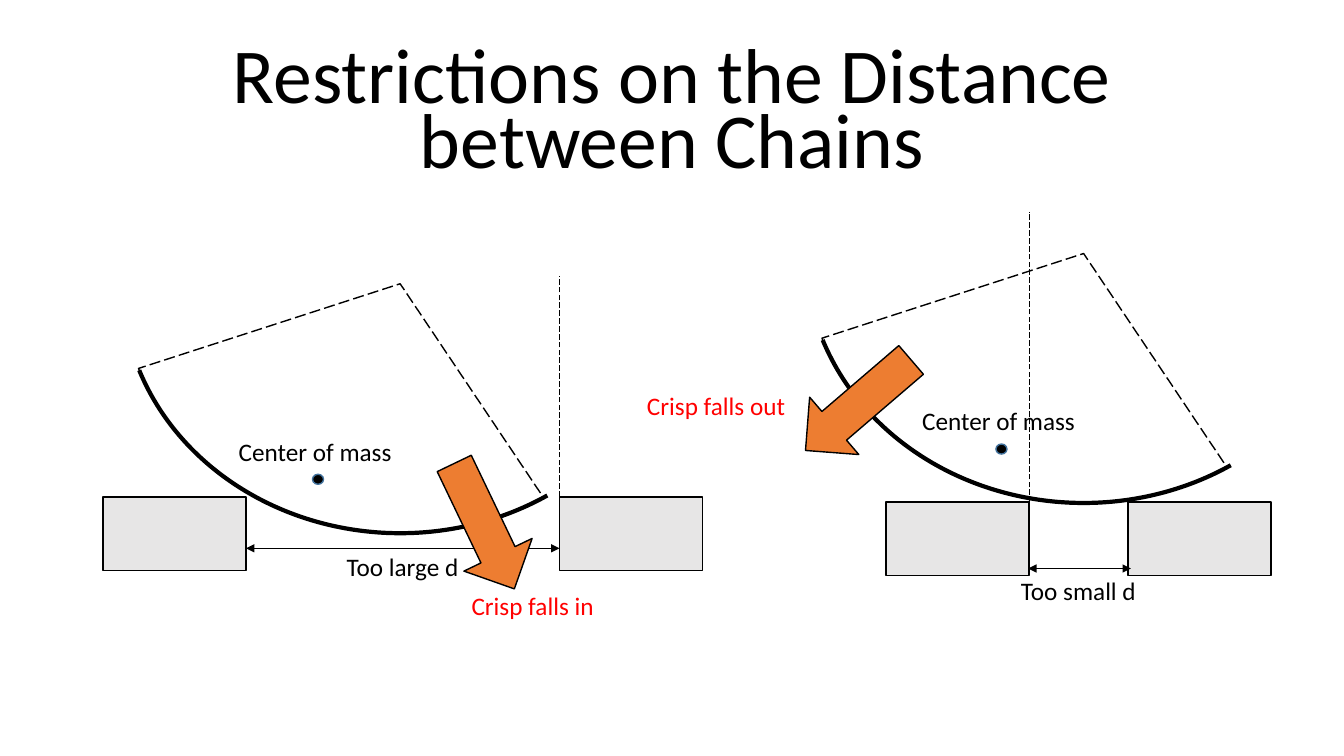
from lxml import etree
from pptx import Presentation
from pptx.dml.color import RGBColor
from pptx.enum.dml import MSO_LINE
from pptx.enum.shapes import MSO_CONNECTOR, MSO_SHAPE
from pptx.enum.text import MSO_ANCHOR, MSO_AUTO_SIZE, PP_ALIGN
from pptx.oxml.ns import qn
from pptx.util import Inches, Pt

RECT, PIE, ARC = MSO_SHAPE.RECTANGLE, MSO_SHAPE.PIE, MSO_SHAPE.ARC
OVAL, DOWN_ARROW = MSO_SHAPE.OVAL, MSO_SHAPE.DOWN_ARROW
STRAIGHT = MSO_CONNECTOR.STRAIGHT
LONG_DASH = MSO_LINE.LONG_DASH
BOTTOM = MSO_ANCHOR.BOTTOM
CENTER = PP_ALIGN.CENTER
GROW = MSO_AUTO_SIZE.SHAPE_TO_FIT_TEXT

BLACK = RGBColor(0x00, 0x00, 0x00)
WHITE = RGBColor(0xFF, 0xFF, 0xFF)
GRAY = RGBColor(0xE7, 0xE6, 0xE6)
ORANGE = RGBColor(0xED, 0x7D, 0x31)
RED = RGBColor(0xFF, 0x00, 0x00)
BLUE = RGBColor(0x43, 0x73, 0x9E)

COLUMNS, ROWS = 133.33, 75
CELL = Inches(0.1)
FONT = "Calibri"
CRISP_WIDTH, CRISP_HEIGHT = 55.2, 49.5
BLOCK_WIDTH, BLOCK_HEIGHT = 14.2, 7.3
GUIDE_HEIGHT = 28.9


def cells(*counts):
    return [round(count * CELL) for count in counts]


def set_all(target, values):
    for name, value in values.items():
        setattr(target, name, value)


def style_line(line, color, points, dash=None):
    line.color.rgb = color
    set_all(line, {"width": Pt(points), "dash_style": dash})


def add_figure(slide, kind, place, fill=None, color=BLACK, points=1,
               dash=None, angles=(), rotation=0):
    figure = slide.shapes.add_shape(kind, *cells(*place))
    figure.shadow.inherit = False
    figure.rotation = rotation
    for index, angle in enumerate(angles):
        figure.adjustments[index] = angle
    if fill is None:
        figure.fill.background()
    else:
        figure.fill.solid()
        figure.fill.fore_color.rgb = fill
    style_line(figure.line, color, points, dash)


def add_text(slide, words, place, size=18, color=BLACK, frame_format=None,
             paragraph_format=None):
    frame = slide.shapes.add_textbox(*cells(*place)).text_frame
    set_all(frame, frame_format or {"word_wrap": False, "auto_size": GROW})
    paragraph = frame.paragraphs[0]
    set_all(paragraph, paragraph_format or {})
    run = paragraph.add_run()
    run.text = words
    set_all(run.font, {"name": FONT, "size": Pt(size)})
    run.font.color.rgb = color


def add_rule(slide, start, end, dash=None, arrows=False):
    rule = slide.shapes.add_connector(STRAIGHT, *cells(*start, *end))
    style_line(rule.line, BLACK, 0.5, dash)
    if arrows:
        outline = rule.line._get_or_add_ln()
        for tip in ("a:headEnd", "a:tailEnd"):
            etree.SubElement(outline, qn(tip), type="triangle")
    etree.SubElement(rule._element.spPr, qn("a:effectLst"))


def add_block(slide, left, top):
    add_figure(slide, RECT, (left, top, BLOCK_WIDTH, BLOCK_HEIGHT), GRAY)


def add_crisp(slide, left, top):
    place = (left, top, CRISP_WIDTH, CRISP_HEIGHT)
    add_figure(slide, PIE, place, WHITE, dash=LONG_DASH,
               angles=(33.698, 97.243))
    add_figure(slide, ARC, place, points=3, angles=(33.123, 96.992))
    add_figure(slide, OVAL, (left + 18.9, top + 43.65, 1.1, 1), BLACK, BLUE)
    add_text(slide, "Center of mass", (left + 10.6, top + 39.35, 19.1, 4))


def add_distance(slide, left, right, row):
    add_rule(slide, (left, row), (right, row), arrows=True)


def add_guide(slide, column, bottom):
    add_rule(slide, (column, bottom), (column, bottom - GUIDE_HEIGHT),
             LONG_DASH)


def add_fall(slide, left, top, rotation):
    add_figure(slide, DOWN_ARROW, (left, top, 7.5, 13.8), ORANGE,
               rotation=rotation)


def main():
    deck = Presentation()
    deck.slide_width, deck.slide_height = cells(COLUMNS, ROWS)
    slide = deck.slides.add_slide(deck.slide_layouts[6])

    for left in (87.9, 111.9):
        add_block(slide, left, 49.8)
    add_crisp(slide, 79.9, 0.4)
    add_distance(slide, 102, 112.2, 56.4)

    add_block(slide, 10.2, 49.3)
    add_crisp(slide, 12.1, 3.4)
    add_text(slide, "Too large d", (33.4, 54.2, 13.2, 4))
    add_distance(slide, 24.4, 55.5, 54.4)
    add_text(slide, "Too small d", (100.3, 56.6, 13.5, 4))

    add_fall(slide, 44.3, 45.3, 334.4)
    add_fall(slide, 81.4, 33.3, 49.4)
    add_text(slide, "Crisp falls in", (45.8, 58.1, 14.3, 4), color=RED)
    add_text(slide, "Crisp falls out", (63.2, 38.2, 15.9, 4), color=RED)

    add_guide(slide, 55.5, 56.3)
    add_block(slide, 55.5, 49.3)
    add_guide(slide, 102.1, 49.9)

    add_text(slide, "Restrictions on the Distance between Chains",
             (9.2, 4, 115, 14.5), 55.5,
             frame_format={"word_wrap": True, "vertical_anchor": BOTTOM},
             paragraph_format={"alignment": CENTER, "line_spacing": 0.7})
    deck.save("out.pptx")


if __name__ == "__main__":
    main()
